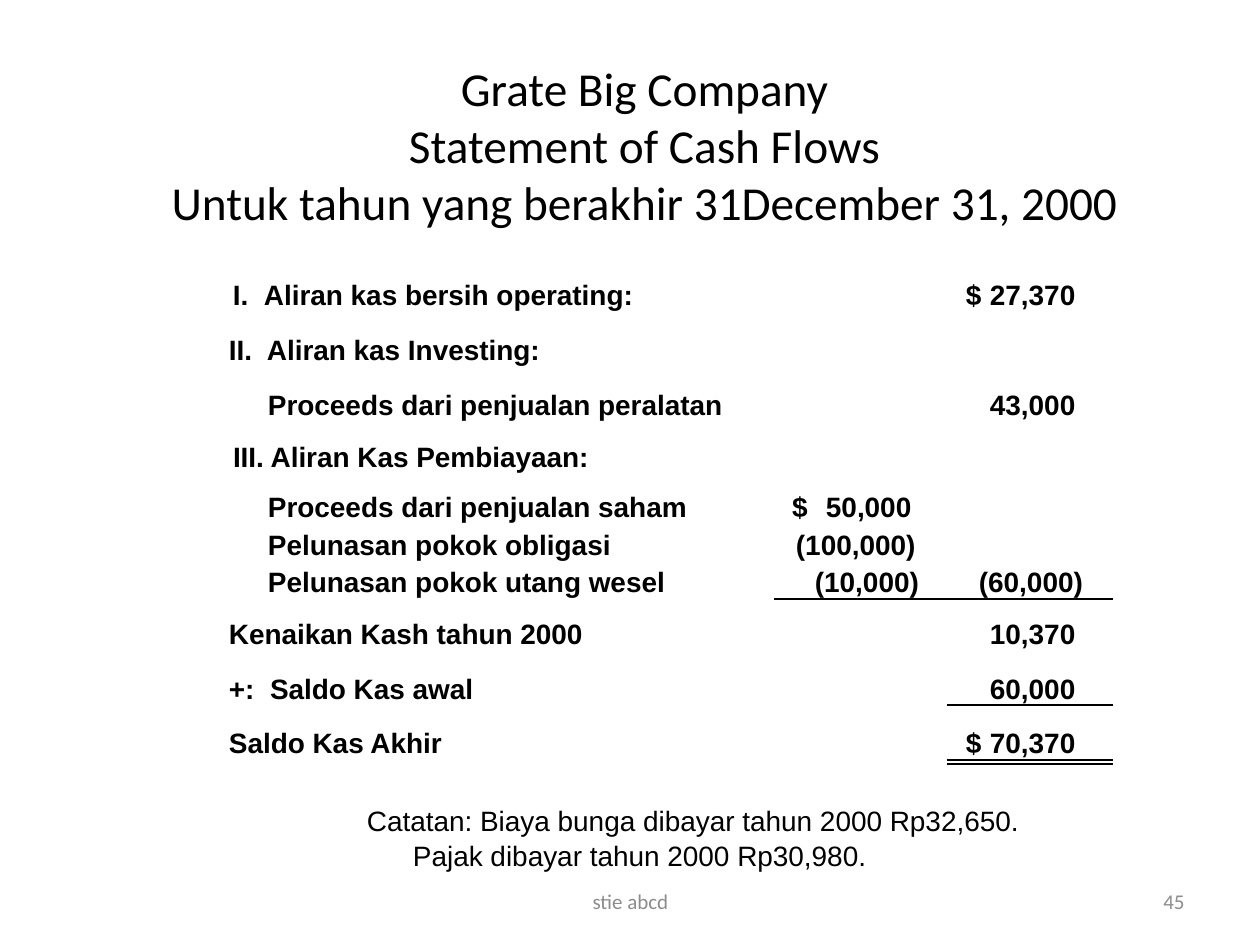
from lxml.etree import SubElement
from pptx import Presentation
from pptx.dml.color import RGBColor
from pptx.enum.shapes import MSO_CONNECTOR
from pptx.enum.text import MSO_ANCHOR, PP_ALIGN
from pptx.oxml.ns import qn
from pptx.util import Emu, Pt

COLORS = {"ink": "000000", "footer": "8C8C8C"}
EMU_PER_PX = 914400 / 126
LABEL_LEFT, NUMERAL_LEFT, ITEM_INDENT = 229, 233, 39
SUBTOTAL_LEFT, TOTAL_LEFT, RULE_RIGHT = 774, 947, 1113

TITLE_LINES = [
    "Grate Big Company",
    "Statement of Cash Flows",
    "Untuk tahun yang berakhir 31December 31, 2000",
]

HEADINGS = [
    (NUMERAL_LEFT, 278, 402, "I.\tAliran kas bersih operating:", 31),
    (LABEL_LEFT, 333, 314, "II.\tAliran kas Investing:", 38),
    (NUMERAL_LEFT, 440, 358, "III. Aliran Kas Pembiayaan:", 0),
    (LABEL_LEFT, 617, 354, "Kenaikan Kash tahun 2000", 0),
    (LABEL_LEFT, 672, 246, "+:\tSaldo Kas awal", 41),
    (LABEL_LEFT, 726, 214, "Saldo Kas Akhir", 0),
]

ITEMS = [
    (388, 495, "Proceeds dari penjualan peralatan"),
    (490, 460, "Proceeds dari penjualan saham"),
    (528, 383, "Pelunasan pokok obligasi"),
    (564, 437, "Pelunasan pokok utang wesel"),
]

AMOUNTS = [
    (966, 278, 37, "$"),
    (990, 278, 123, "27,370"),
    (990, 388, 123, "43,000"),
    (792, 490, 47, "$"),
    (826, 490, 123, "50,000"),
    (796, 528, 168, "(100,000)"),
    (815, 564, 149, "(10,000)"),
    (979, 564, 149, "(60,000)"),
    (990, 617, 123, "10,370"),
    (990, 672, 123, "60,000"),
    (966, 726, 37, "$"),
    (990, 726, 123, "70,370"),
]

NOTES = [
    (367, 804, 654, "Catatan: Biaya bunga dibayar tahun 2000 Rp32,650."),
    (413, 839, 454, "Pajak dibayar tahun 2000 Rp30,980."),
]

RULES = [(SUBTOTAL_LEFT, 599), (TOTAL_LEFT, 705), (TOTAL_LEFT, 760), (TOTAL_LEFT, 764)]


def px(length):
    return Emu(round(length * EMU_PER_PX))


def add_run(paragraph, text, size, font="Arial", color="ink", bold=False):
    run = paragraph.add_run()
    run.text = text
    run.font.size = Pt(size)
    run.font.name = font
    run.font.bold = bold
    run.font.color.rgb = RGBColor.from_string(COLORS[color])


def add_title(slide):
    title = slide.shapes.title
    title.left, title.top, title.width, title.height = map(px, (54, 66, 1181, 157))
    title.text_frame.vertical_anchor = MSO_ANCHOR.MIDDLE
    paragraph = title.text_frame.paragraphs[0]
    paragraph.alignment = PP_ALIGN.CENTER
    for index, line in enumerate(TITLE_LINES):
        if index:
            paragraph.add_line_break()
        add_run(paragraph, line, 27, "Calibri")


def add_text(slide, left, top, width, text, bold=True, indent=0, tab=0):
    box = slide.shapes.add_textbox(px(left), px(top), px(width), px(34))
    frame = box.text_frame
    frame.word_wrap = True
    frame.margin_left = frame.margin_right = frame.margin_top = frame.margin_bottom = 0
    paragraph = frame.paragraphs[0]
    properties = paragraph._p.get_or_add_pPr()
    if indent:
        properties.set("marL", str(px(indent)))
    if tab:
        stops = SubElement(properties, qn("a:tabLst"))
        SubElement(stops, qn("a:tab"), pos=str(px(tab)), algn="l")
    add_run(paragraph, text, 16, bold=bold)


def add_footer(slide, left, width, text, alignment):
    box = slide.shapes.add_textbox(px(left), px(876), px(width), px(50))
    box.text_frame.word_wrap = True
    box.text_frame.vertical_anchor = MSO_ANCHOR.MIDDLE
    paragraph = box.text_frame.paragraphs[0]
    paragraph.alignment = alignment
    add_run(paragraph, text, 12, "Calibri", "footer")


def add_rule(slide, left, top):
    rule = slide.shapes.add_connector(
        MSO_CONNECTOR.STRAIGHT, px(left), px(top), px(RULE_RIGHT), px(top)
    )
    rule.line.width = Pt(1)
    rule.line.color.rgb = RGBColor.from_string(COLORS["ink"])
    SubElement(rule._element.spPr, qn("a:effectLst"))


def main():
    presentation = Presentation()
    presentation.slide_width, presentation.slide_height = px(1260), px(945)
    slide = presentation.slides.add_slide(presentation.slide_layouts[5])
    add_title(slide)
    add_footer(slide, 431, 399, "stie abcd", PP_ALIGN.CENTER)
    add_footer(slide, 903, 294, "45", PP_ALIGN.RIGHT)
    for left, top, width, text, tab in HEADINGS:
        add_text(slide, left, top, width, text, tab=tab)
    for top, width, text in ITEMS:
        add_text(slide, LABEL_LEFT, top, width, text, indent=ITEM_INDENT)
    for amount in AMOUNTS:
        add_text(slide, *amount)
    for note in NOTES:
        add_text(slide, *note, bold=False)
    for left, top in RULES:
        add_rule(slide, left, top)
    presentation.save("out.pptx")


if __name__ == "__main__":
    main()
